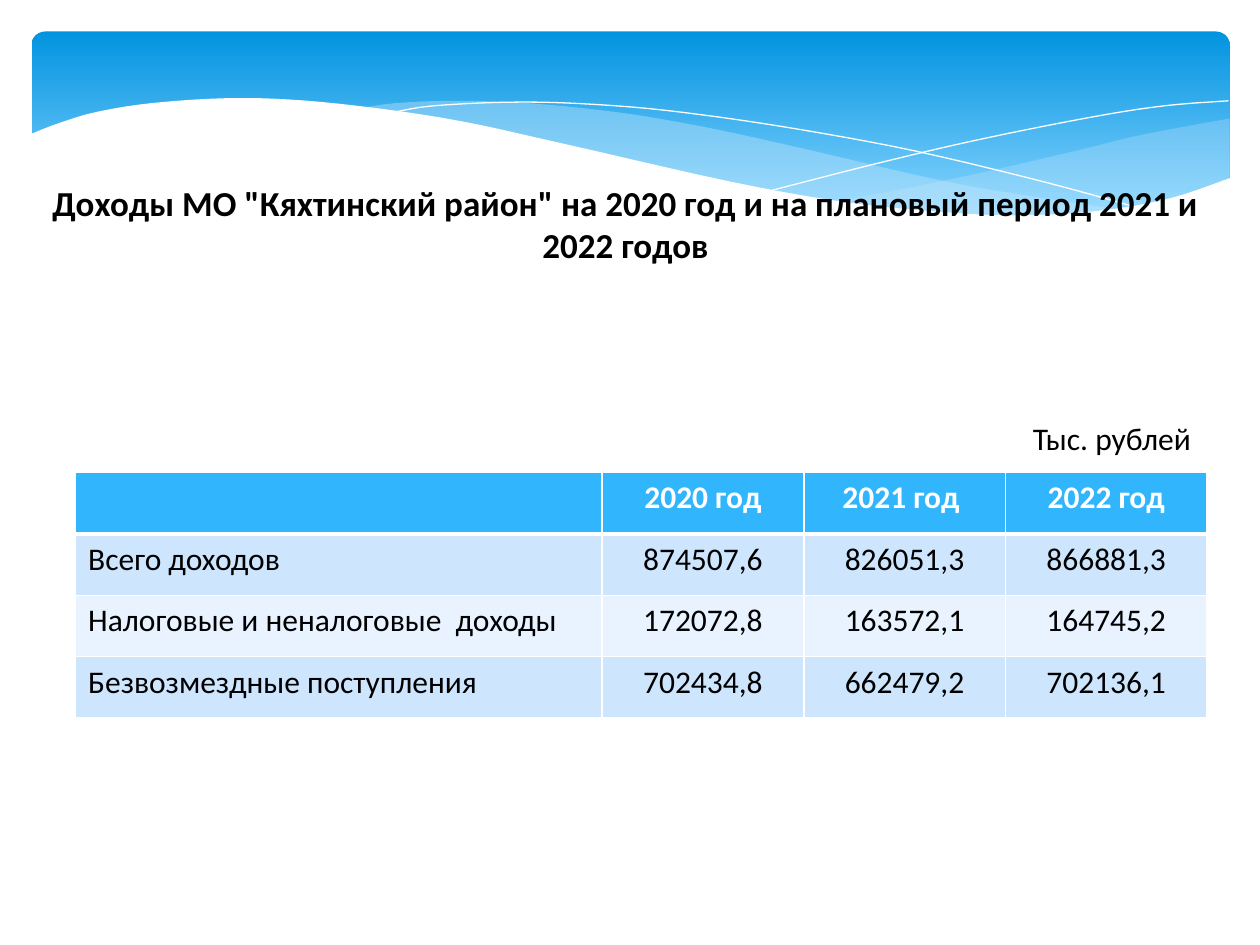
from lxml.etree import SubElement
from pptx import Presentation
from pptx.dml.color import RGBColor
from pptx.enum.shapes import MSO_SHAPE
from pptx.enum.text import MSO_ANCHOR, PP_ALIGN
from pptx.oxml import parse_xml
from pptx.oxml.ns import nsdecls, qn
from pptx.util import Inches, Pt

COLORS = {
    "sky": "0293E0", "haze": "83D3FE", "mist": "C6E7FC", "white": "FFFFFF",
    "black": "000000", "header": "31B6FD", "odd": "CEE5FE", "even": "E8F3FF",
}
CELL = Inches(0.1)
FONT = "Calibri"

RIGHT_WAVE = [
    [(95.1, 6.9), (88.1, 8.2), (83.6, 9.3), (75.4, 11.2), (68.1, 12.7), (63.6, 13.5)],
    [(63.6, 13.5), (68, 14), (73.2, 14.5), (78.9, 14.7), (83.8, 14.5), (88, 13.8),
     (91.7, 12.9), (95.1, 11.6)],
]
MIDDLE_WAVE = [
    [(86.8, 14.2), (78.2, 12.9), (71.6, 11.7), (60.4, 9.1), (53, 7.5), (46.4, 6.4),
     (39.5, 5.7), (33.6, 5.5), (28.8, 5.7), (26.1, 6.1)],
    [(26.1, 6.1), (31.7, 6.9), (37.9, 8.1), (46.6, 10.1), (54.1, 11.8), (60.9, 13.1),
     (67, 14), (73.6, 14.6), (79.3, 14.8), (83.2, 14.6), (86.8, 14.2)],
]
FALLING_LINE = [
    [(28.4, 6.5), (31.9, 5.9), (39.1, 5.6), (46.4, 5.9), (53.1, 6.6), (61.1, 7.8),
     (70.2, 9.5), (80.6, 12), (88.2, 14.1)],
]
RISING_LINE = [
    [(58.8, 12.6), (67, 10.5), (75.1, 8.6), (84.1, 6.8), (89.9, 5.9), (95, 5.5)],
]
WHITE_WAVE = [
    [(95.2, 11.6), (90.5, 13.2), (85, 14.2), (78.4, 14.6), (71.9, 14.3), (64.3, 13.5),
     (55.4, 11.9), (42.2, 8.9), (34, 7.1), (26.7, 6), (20.5, 5.4), (15.2, 5.3),
     (9.4, 5.7), (5.1, 6.4), (2.1, 7.3), (-0.2, 8.2)],
    [(-0.2, 19.9), (95.2, 19.9)],
]
INCOME = [
    ["", "2020 год", "2021 год ", "2022 год"],
    ["Всего доходов", "874507,6", "826051,3", "866881,3"],
    ["Налоговые и неналоговые  доходы", "172072,8", "163572,1", "164745,2"],
    ["Безвозмездные поступления", "702434,8", "662479,2", "702136,1"],
]


def rgb(name):
    """Return the named colour."""
    return RGBColor.from_string(COLORS[name])


def grid(*lengths):
    """Turn grid columns or rows into slide lengths."""
    return [round(length * CELL) for length in lengths]


def write(frame, text, size=18, color="black", bold=False, align=PP_ALIGN.LEFT):
    """Put formatted text in a text frame."""
    frame.word_wrap = True
    paragraph = frame.paragraphs[0]
    paragraph.alignment = align
    run = paragraph.add_run()
    run.text = text
    run.font.name, run.font.size, run.font.bold = FONT, Pt(size), bold
    run.font.color.rgb = rgb(color)


def smooth(knots, steps=5):
    """Pass a Catmull-Rom curve through the knots."""
    if len(knots) < 3:
        return knots
    padded = [knots[0], *knots, knots[-1]]
    curve = [knots[0]]
    for before, start, end, after in zip(padded, padded[1:], padded[2:], padded[3:]):
        for step in range(1, steps + 1):
            t = step / steps
            curve.append(tuple(
                b + ((c - a) * t + (2 * a - 5 * b + 4 * c - d) * t ** 2
                     + (3 * b - a - 3 * c + d) * t ** 3) / 2
                for a, b, c, d in zip(before, start, end, after)))
    return curve


def add_wave(slide, box, edges, fill=None, opacity=100):
    """Draw a filled wave, or a thin white curve when there is no fill."""
    points = [tuple(grid(box[0] + x, box[1] + y)) for edge in edges for x, y in smooth(edge)]
    builder = slide.shapes.build_freeform(*points[0])
    builder.add_line_segments(points[1:], close=fill is not None)
    wave = builder.convert_to_shape()
    wave.shadow.inherit = False
    if fill is None:
        wave.fill.background()
        wave.line.color.rgb = rgb("white")
        wave.line.width = Pt(0)
        return
    wave.fill.solid()
    wave.fill.fore_color.rgb = rgb(fill)
    wave.line.fill.background()
    if opacity < 100:
        color = next(wave.element.iter(qn("a:srgbClr")))
        SubElement(color, qn("a:alpha"), val=str(opacity * 1000))


def add_banner(slide, box):
    """Build the blue banner with its waves."""
    banner = slide.shapes.add_shape(MSO_SHAPE.ROUNDED_RECTANGLE, *grid(*box))
    banner.adjustments[0] = 0.07
    banner.shadow.inherit = False
    banner.line.fill.background()
    banner.fill.gradient()
    banner.fill.gradient_angle = 270
    for stop, color, position in zip(banner.fill.gradient_stops, ("sky", "haze"), (0, 0.9)):
        stop.color.rgb = rgb(color)
        stop.position = position
    add_wave(slide, box, RIGHT_WAVE, "mist", 29)
    add_wave(slide, box, MIDDLE_WAVE, "mist", 40)
    add_wave(slide, box, FALLING_LINE)
    add_wave(slide, box, RISING_LINE)
    add_wave(slide, box, WHITE_WAVE, "white")


def add_heading(slide, box, text):
    """Fill the title placeholder and bring it in front of the banner."""
    heading = slide.shapes.title
    heading.left, heading.top, heading.width, heading.height = grid(*box)
    heading.text_frame.vertical_anchor = MSO_ANCHOR.TOP
    write(heading.text_frame, text, size=20, bold=True, align=PP_ALIGN.CENTER)
    slide.shapes.element.append(heading.element)


def add_unit(slide, box, text):
    """Write the unit of measure above the table."""
    unit = slide.shapes.add_textbox(*grid(*box))
    write(unit.text_frame, text, align=PP_ALIGN.RIGHT)


def set_borders(cell, **widths):
    """Give a cell white borders of the given widths in points."""
    properties = cell._tc.get_or_add_tcPr()
    for index, (side, width) in enumerate(widths.items()):
        properties.insert(index, parse_xml(
            f'<a:ln{side} {nsdecls("a")} w="{Pt(width)}"><a:solidFill>'
            f'<a:srgbClr val="{COLORS["white"]}"/></a:solidFill></a:ln{side}>'))


def add_income_table(slide, box, rows):
    """Build the table of income by year."""
    table = slide.shapes.add_table(len(rows), len(rows[0]), *grid(*box)).table
    for column, share in zip(table.columns, (0.47, 0.18, 0.18, 0.18)):
        column.width = round(box[2] * share / 1.01 * CELL)
    for r, row in enumerate(rows):
        fill = "header" if r == 0 else "odd" if r % 2 else "even"
        for c, text in enumerate(row):
            cell = table.cell(r, c)
            set_borders(cell, L=1, R=1, T=3 if r == 1 else 1, B=3 if r == 0 else 1)
            cell.fill.solid()
            cell.fill.fore_color.rgb = rgb(fill)
            if text:
                write(cell.text_frame, text, color="black" if r else "white", bold=r == 0,
                      align=PP_ALIGN.CENTER if c else PP_ALIGN.LEFT)


def main():
    """Build and save the income slide."""
    deck = Presentation()
    deck.slide_width, deck.slide_height = grid(100, 75)
    slide = deck.slides.add_slide(deck.slide_layouts[5])
    add_banner(slide, (2.5, 2.5, 95.1, 15.6))
    add_heading(slide, (1.6, 13.9, 96.1, 7.7),
                'Доходы МО "Кяхтинский район" на 2020 год и на плановый период 2021 и 2022 годов')
    add_income_table(slide, (6, 37.5, 89.8, 19.5), INCOME)
    add_unit(slide, (68.9, 32.8, 26.6, 4), "Тыс. рублей")
    deck.save("out.pptx")


if __name__ == "__main__":
    main()
